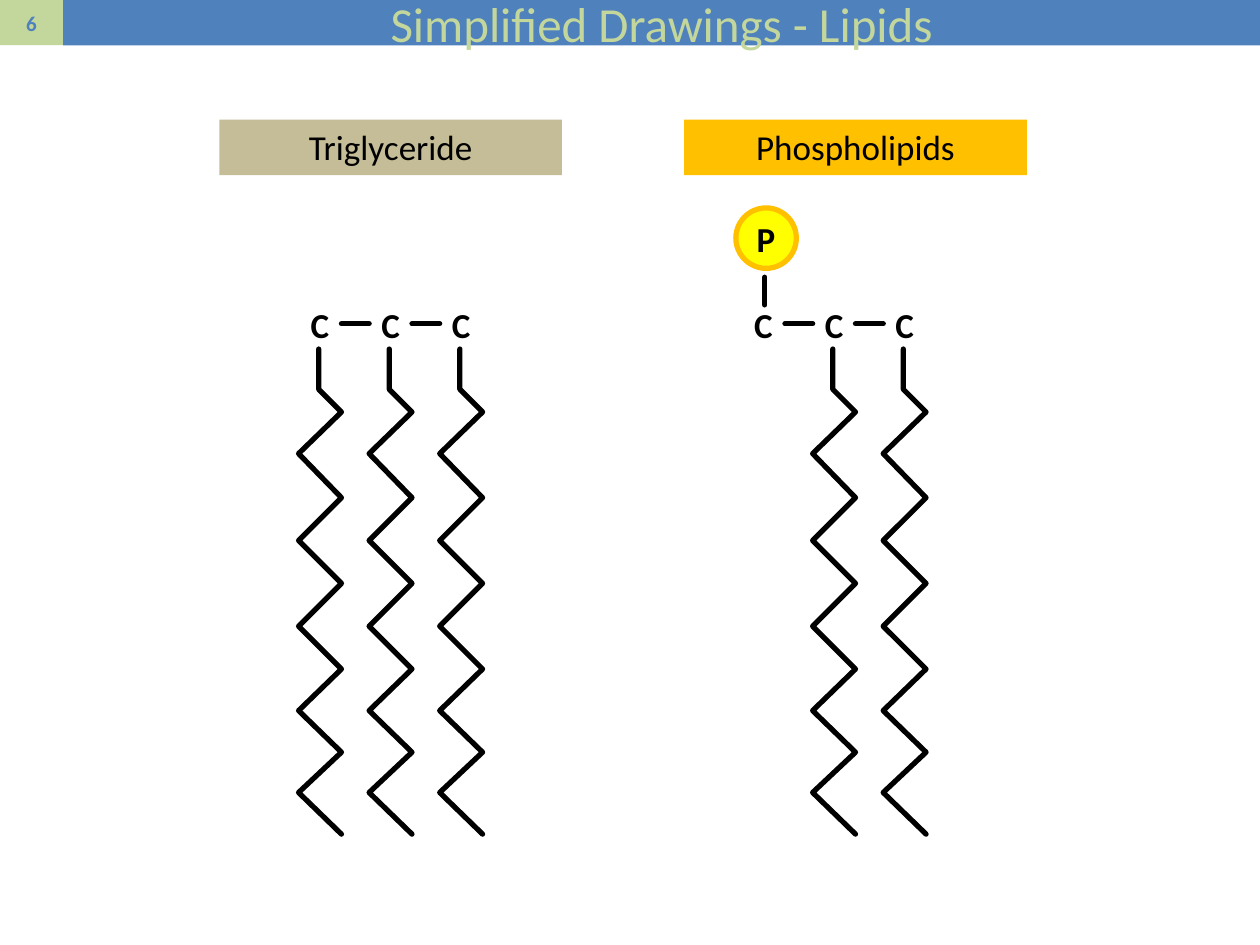
"""Build a slide with simplified drawings of a triglyceride and a phospholipid."""
from dataclasses import dataclass
from typing import Optional

import lxml.etree
import pptx
import pptx.dml.color
import pptx.enum.shapes
import pptx.enum.text
import pptx.oxml.ns
import pptx.util
from pptx.dml.color import RGBColor
from pptx.util import Inches

BLACK = RGBColor(0x00, 0x00, 0x00)
BLUE = RGBColor(0x4F, 0x81, 0xBD)
GREEN = RGBColor(0xC3, 0xD6, 0x9B)
TAN = RGBColor(0xC4, 0xBD, 0x97)
AMBER = RGBColor(0xFF, 0xC0, 0x00)
YELLOW = RGBColor(0xFF, 0xFF, 0x00)

FONT = "Calibri"
BAR_HEIGHT = 0.36
CARBON_COUNT = 3
CARBON_PITCH = 0.56
CARBON_TOP = 2.36
BOND_Y = 2.57
CHAIN_TOP = 2.77
CHAIN_BEND = 3.09
ZIGZAG_HEIGHTS = (3.27, 3.6, 3.95, 4.29, 4.63, 4.97, 5.31, 5.64, 5.97, 6.29, 6.62)
ZIGZAG_OFFSETS = (0.18, -0.16)

RECTANGLE = pptx.enum.shapes.MSO_SHAPE.RECTANGLE
OVAL = pptx.enum.shapes.MSO_SHAPE.OVAL
MIDDLE = pptx.enum.text.MSO_ANCHOR.MIDDLE
TOP = pptx.enum.text.MSO_ANCHOR.TOP


@dataclass(frozen=True)
class Lipid:
    name: str
    label_left: float
    label_color: RGBColor
    carbon_left: float
    has_phosphate: bool


LIPIDS = (
    Lipid("Triglyceride", 1.74, TAN, 2.31, False),
    Lipid("Phospholipids", 5.43, AMBER, 5.83, True),
)


def write_text(shape, text: str, size: int, color: RGBColor, bold: bool = False,
               anchor=MIDDLE, wrap: bool = True) -> None:
    frame = shape.text_frame
    frame.text = text
    frame.word_wrap = wrap
    frame.auto_size = pptx.enum.text.MSO_AUTO_SIZE.NONE
    frame.vertical_anchor = anchor
    paragraph = frame.paragraphs[0]
    paragraph.alignment = pptx.enum.text.PP_ALIGN.CENTER
    font = paragraph.runs[0].font
    font.name = FONT
    font.size = pptx.util.Pt(size)
    font.bold = bold
    font.color.rgb = color


def add_filled_shape(shapes, kind, left: float, top: float, width: float, height: float,
                     fill: RGBColor, outline: Optional[RGBColor] = None):
    shape = shapes.add_shape(kind, Inches(left), Inches(top), Inches(width), Inches(height))
    shape.shadow.inherit = False
    shape.fill.solid()
    shape.fill.fore_color.rgb = fill
    if outline is None:
        shape.line.fill.background()
    else:
        shape.line.color.rgb = outline
        shape.line.width = pptx.util.Pt(3)
    return shape


def style_stroke(shape) -> None:
    shape.line.color.rgb = BLACK
    shape.line.width = pptx.util.Pt(3)
    outline = shape.element.find(".//" + pptx.oxml.ns.qn("a:ln"))
    outline.set("cap", "rnd")
    lxml.etree.SubElement(outline, pptx.oxml.ns.qn("a:round"))


def add_bond(shapes, start: tuple[float, float], end: tuple[float, float]) -> None:
    bond = shapes.add_connector(pptx.enum.shapes.MSO_CONNECTOR.STRAIGHT,
                                *map(Inches, start + end))
    style_stroke(bond)
    shape_properties = bond.element.find(pptx.oxml.ns.qn("p:spPr"))
    lxml.etree.SubElement(shape_properties, pptx.oxml.ns.qn("a:effectLst"))


def add_fatty_acid(shapes, x: float) -> None:
    points = [(x, CHAIN_BEND)]
    for index, y in enumerate(ZIGZAG_HEIGHTS):
        points.append((x + ZIGZAG_OFFSETS[index % 2], y))
    builder = shapes.build_freeform(Inches(x), Inches(CHAIN_TOP))
    builder.add_line_segments([(Inches(px), Inches(py)) for px, py in points], close=False)
    chain = builder.convert_to_shape()
    chain.shadow.inherit = False
    chain.fill.background()
    style_stroke(chain)


def add_phosphate(shapes, carbon_left: float) -> None:
    bond_x = carbon_left + 0.24
    add_bond(shapes, (bond_x, 2.42), (bond_x, 2.2))
    phosphate = add_filled_shape(shapes, OVAL, carbon_left + 0.01, 1.65, 0.48, 0.48,
                                 YELLOW, AMBER)
    write_text(phosphate, "P", 20, BLACK, bold=True, wrap=False)


def add_lipid(slide, lipid: Lipid) -> None:
    shapes = slide.shapes.add_group_shape().shapes
    for index in range(CARBON_COUNT):
        left = lipid.carbon_left + index * CARBON_PITCH
        carbon = shapes.add_textbox(Inches(left), Inches(CARBON_TOP),
                                    Inches(0.46), Inches(0.44))
        write_text(carbon, "C", 20, BLACK, bold=True, anchor=TOP)
        if index < CARBON_COUNT - 1:
            add_bond(shapes, (left + 0.4, BOND_Y), (left + 0.62, BOND_Y))
        if index > 0 or not lipid.has_phosphate:
            add_fatty_acid(shapes, left + 0.22)
    if lipid.has_phosphate:
        add_phosphate(shapes, lipid.carbon_left)
    label = add_filled_shape(slide.shapes, RECTANGLE, lipid.label_left, 0.95, 2.72, 0.44,
                             lipid.label_color)
    write_text(label, lipid.name, 20, BLACK, anchor=TOP)


def add_header(slide) -> None:
    number = add_filled_shape(slide.shapes, RECTANGLE, 0, 0, 0.5, BAR_HEIGHT, GREEN)
    write_text(number, "6", 12, BLUE, bold=True)
    title = slide.shapes.title
    title.left, title.top = Inches(0.5), Inches(0)
    title.width, title.height = Inches(9.5), Inches(BAR_HEIGHT)
    title.fill.solid()
    title.fill.fore_color.rgb = BLUE
    write_text(title, "Simplified Drawings - Lipids", 28, GREEN)


def main() -> None:
    presentation = pptx.Presentation()
    presentation.slide_width = Inches(10)
    presentation.slide_height = Inches(7.5)
    slide = presentation.slides.add_slide(presentation.slide_layouts.get_by_name("Title Only"))
    add_header(slide)
    for lipid in LIPIDS:
        add_lipid(slide, lipid)
    presentation.save("out.pptx")


if __name__ == "__main__":
    main()
